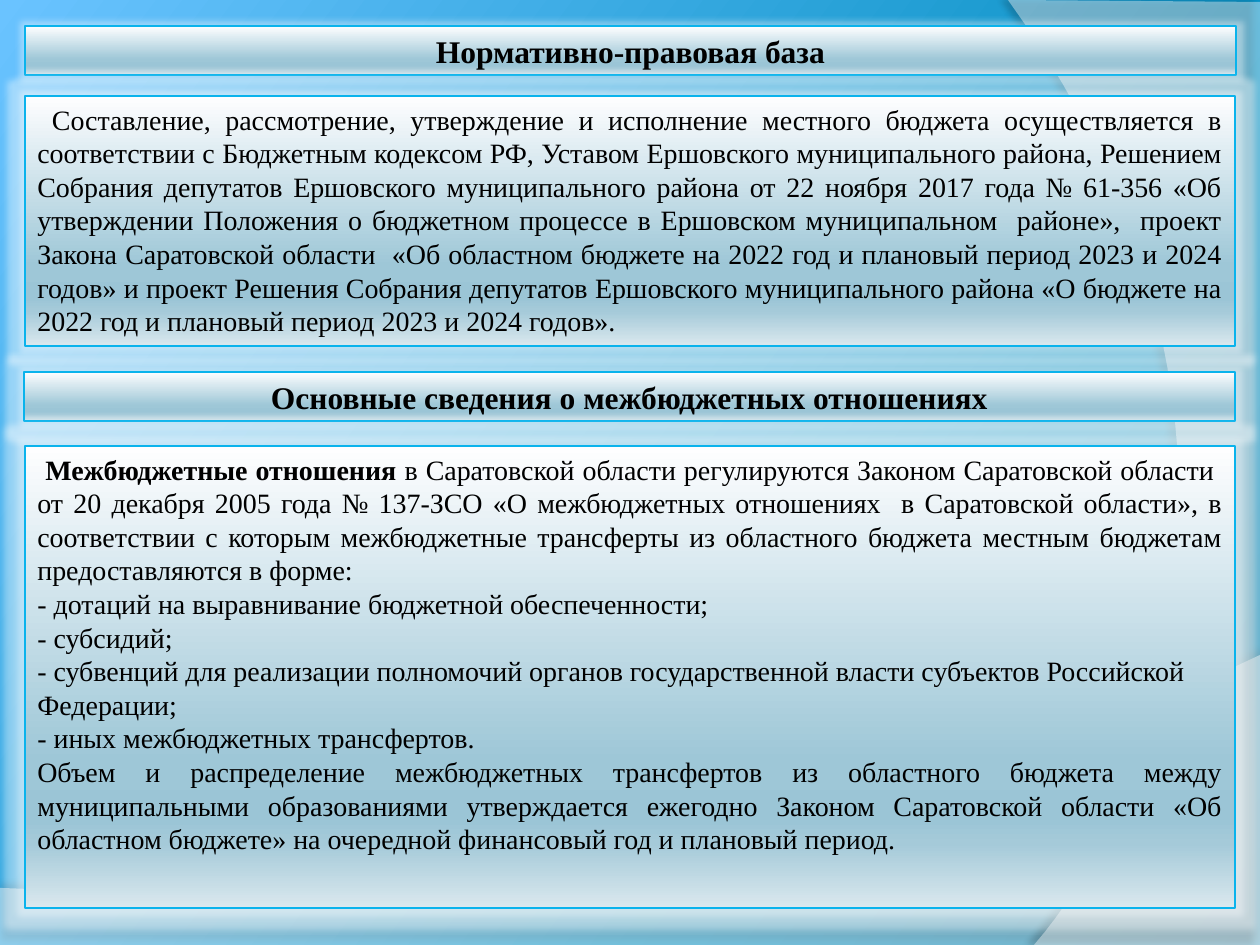
from lxml import etree
from pptx import Presentation
from pptx.dml.color import RGBColor
from pptx.enum.shapes import MSO_SHAPE
from pptx.enum.text import MSO_ANCHOR, MSO_AUTO_SIZE, PP_ALIGN
from pptx.oxml.ns import qn
from pptx.util import Emu, Pt

RECT = MSO_SHAPE.RECTANGLE
TOP, MIDDLE = MSO_ANCHOR.TOP, MSO_ANCHOR.MIDDLE
LEFT, CENTER, JUST = PP_ALIGN.LEFT, PP_ALIGN.CENTER, PP_ALIGN.JUSTIFY
FIXED = MSO_AUTO_SIZE.NONE
FONT = "Times New Roman"
COLORS = {"text": "000000", "line": "0AB3EC", "white": "FFFFFF"}
SKY = [(0, "0076A1"), (30, "008DC0"), (100, "6AC3FF")]
GLASS = [(0, "FEFEFF"), (68, "9EC7D7"), (81, "9BC5D6"),
         (86, "A5CAD9"), (100, "DAE8EE")]

HEADS = [
    ("Нормативно-правовая база", (25, 26, 1211, 49)),
    ("Основные сведения о межбюджетных отношениях", (24, 372, 1211, 49)),
]
LAW = [
    (JUST, [(" Составление, рассмотрение, утверждение и исполнение местного бюджета "
             "осуществляется в соответствии с Бюджетным кодексом РФ, Уставом Ершовского "
             "муниципального района, Решением Собрания депутатов Ершовского муниципального "
             "района от 22 ноября 2017 года № 61-356 «Об утверждении Положения о бюджетном "
             "процессе в Ершовском муниципальном  районе»,  проект Закона Саратовской "
             "области  «Об областном бюджете на 2022 год и плановый период 2023 и 2024 "
             "годов» и проект Решения Собрания депутатов Ершовского муниципального района "
             "«О бюджете на 2022 год и плановый период 2023 и 2024 годов».", False)]),
]
FORMS = [
    "дотаций на выравнивание бюджетной обеспеченности;",
    "субсидий;",
    "субвенций для реализации полномочий органов государственной власти субъектов "
    "Российской Федерации;",
    "иных межбюджетных трансфертов.",
]
LINKS = [
    (JUST, [(" Межбюджетные отношения", True),
            (" в Саратовской области регулируются Законом Саратовской области  от 20 "
             "декабря 2005 года № 137-ЗСО «О межбюджетных отношениях  в Саратовской "
             "области», в соответствии с которым межбюджетные трансферты из областного "
             "бюджета местным бюджетам предоставляются в форме:", False)]),
    *[(LEFT, [("- " + form, False)]) for form in FORMS],
    (JUST, [("Объем и распределение межбюджетных трансфертов из областного бюджета между "
             "муниципальными образованиями утверждается ежегодно Законом Саратовской "
             "области «Об областном бюджете» на очередной финансовый год и плановый "
             "период.", False)]),
]
BODIES = [(LAW, (25, 96, 1210, 250)), (LINKS, (25, 446, 1210, 462))]

WAVES = [
    {"edge": [(0, 888), (0, 945), (1260, 945)],
     "curve": [(1260, 655), (704, 919), (493, 906), (0, 888)],
     "alpha": 45, "shade": (35, 4, 3.5, 270)},
    {"edge": [(1260, 2), (1260, 945)],
     "curve": [(1034, 945), (1178, 780), (1283, 378), (1008, 0)],
     "alpha": 40, "shade": (45, 4, 4, 180)},
]
STEPS = 40


def px(n):
    return Emu(round(n * 914400 / 126))


def sub(node, tag, **attrs):
    return etree.SubElement(node, qn("a:" + tag),
                            {key: str(val) for key, val in attrs.items()})


def shade(fill, root, stops, angle):
    fill.gradient()
    grad = next(root.iter(qn("a:gradFill")))
    for child in list(grad):
        grad.remove(child)
    group = sub(grad, "gsLst")
    for pos, color in stops:
        stop = sub(group, "gs", pos=pos * 1000)
        sub(stop, "srgbClr", val=color)
    sub(grad, "lin", ang=angle * 60000, scaled=0)


def effect(shape, tag, color, alpha, **attrs):
    shape.shadow.inherit = False
    group = next(shape.element.iter(qn("a:effectLst")))
    tint = sub(sub(group, tag, **attrs), "srgbClr", val=color)
    sub(tint, "alpha", val=alpha * 1000)


def bend(points, t):
    weights = [(1 - t) ** 3, 3 * t * (1 - t) ** 2, 3 * t * t * (1 - t), t ** 3]
    return tuple(sum(w * p[i] for w, p in zip(weights, points)) for i in (0, 1))


def add_wave(slide, wave):
    arc = [bend(wave["curve"], i / STEPS) for i in range(STEPS + 1)]
    dots = [(px(x), px(y)) for x, y in wave["edge"] + arc]
    pen = slide.shapes.build_freeform(*dots[0])
    pen.add_line_segments(dots[1:], close=True)
    shape = pen.convert_to_shape()
    shape.fill.solid()
    shape.fill.fore_color.rgb = RGBColor.from_string(COLORS["white"])
    tint = next(shape.element.iter(qn("a:srgbClr")))
    sub(tint, "alpha", val=wave["alpha"] * 1000)
    shape.line.fill.background()
    alpha, blur, dist, angle = wave["shade"]
    effect(shape, "outerShdw", COLORS["text"], alpha, blurRad=Pt(blur),
           dist=Pt(dist), dir=angle * 60000, rotWithShape=0)


def style(shape, box):
    shape.left, shape.top, shape.width, shape.height = map(px, box)
    shade(shape.fill, shape.element, GLASS, 90)
    shape.line.color.rgb = RGBColor.from_string(COLORS["line"])
    shape.line.width = Pt(0.75)
    effect(shape, "glow", COLORS["white"], 40, rad=px(13))


def write(shape, paras, size, anchor):
    frame = shape.text_frame
    frame.word_wrap = True
    frame.auto_size = FIXED
    frame.vertical_anchor = anchor
    for i, (align, runs) in enumerate(paras):
        para = frame.add_paragraph() if i else frame.paragraphs[0]
        para.alignment = align
        for text, bold in runs:
            run = para.add_run()
            run.text = text
            run.font.name = FONT
            run.font.size = Pt(size)
            run.font.bold = bold
            run.font.color.rgb = RGBColor.from_string(COLORS["text"])


def add_head(shape, text, box):
    style(shape, box)
    frame = shape.text_frame
    frame.margin_left = frame.margin_right = px(6)
    frame.margin_top = frame.margin_bottom = px(6)
    write(shape, [(CENTER, [(text, True)])], 18, MIDDLE)


def main():
    deck = Presentation()
    deck.slide_width, deck.slide_height = px(1260), px(945)
    slide = deck.slides.add_slide(deck.slide_layouts[5])
    shade(slide.background.fill, slide.element, SKY, 217)
    for wave in WAVES:
        add_wave(slide, wave)
    title = slide.shapes.title
    title.element.getparent().append(title.element)
    for i, (text, box) in enumerate(HEADS):
        shape = slide.shapes.add_shape(RECT, *map(px, box)) if i else title
        add_head(shape, text, box)
        paras, area = BODIES[i]
        body = slide.shapes.add_shape(RECT, *map(px, area))
        style(body, area)
        write(body, paras, 16, TOP)
    deck.save("out.pptx")


if __name__ == "__main__":
    main()
